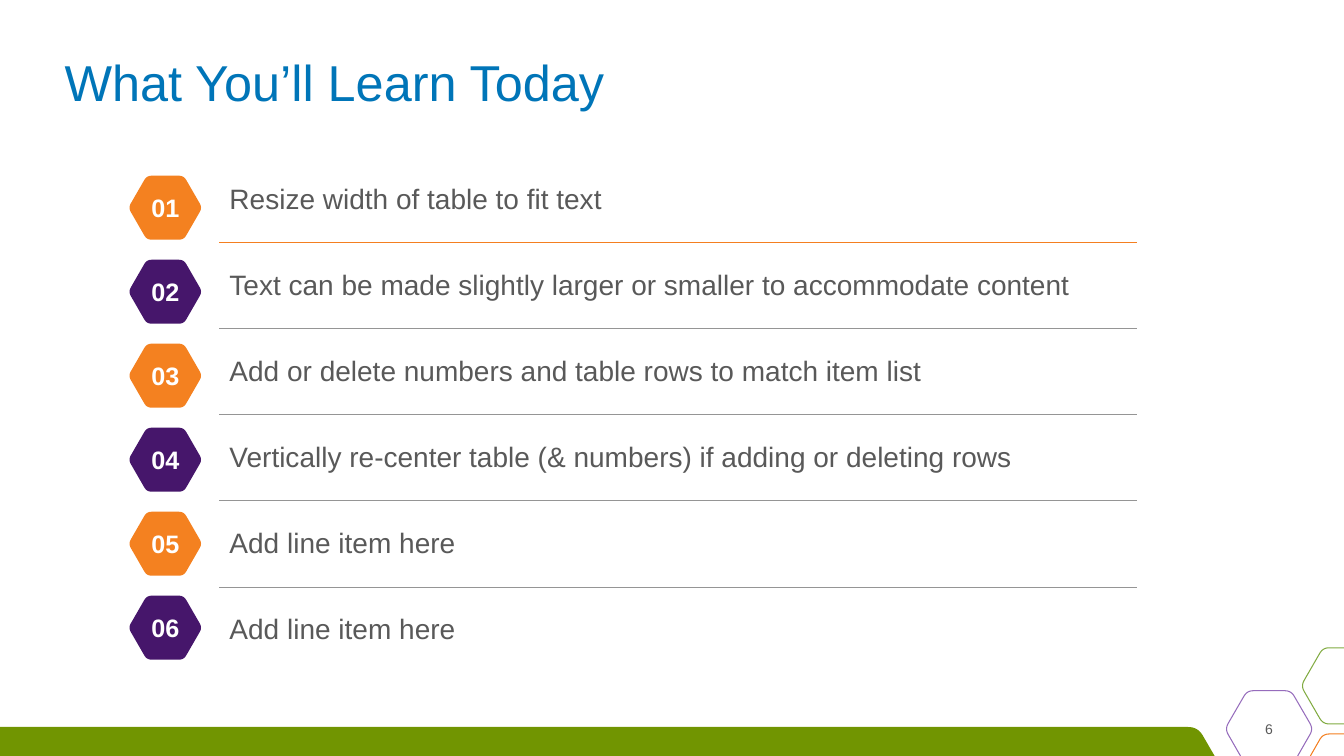
from lxml import etree
from pptx import Presentation
from pptx.dml.color import RGBColor
from pptx.enum.text import MSO_ANCHOR, PP_ALIGN
from pptx.oxml.ns import qn
from pptx.util import Pt

LEFT, CENTER = PP_ALIGN.LEFT, PP_ALIGN.CENTER
MIDDLE = MSO_ANCHOR.MIDDLE

BLUE = RGBColor(0x00, 0x75, 0xB8)
GRAY = RGBColor(0x59, 0x59, 0x59)
RULE_GRAY = RGBColor(0x95, 0x95, 0x95)
ORANGE = RGBColor(0xF4, 0x7F, 0x20)
BADGE_ORANGE = RGBColor(0xF4, 0x81, 0x20)
PURPLE = RGBColor(0x46, 0x16, 0x6B)
LILAC = RGBColor(0x96, 0x6C, 0xBC)
LEAF = RGBColor(0x81, 0xAB, 0x41)
GREEN = RGBColor(0x71, 0x95, 0x01)
WHITE = RGBColor(0xFF, 0xFF, 0xFF)

TITLE = "What You’ll Learn Today"
PAGE_NUMBER = "6"
ITEMS = [
    "Resize width of table to fit text",
    "Text can be made slightly larger or smaller to accommodate content",
    "Add or delete numbers and table rows to match item list",
    "Vertically re-center table (& numbers) if adding or deleting rows",
    "Add line item here",
    "Add line item here",
]

# Corners are (x, y, rounding) in points
FOOTER = [(0, 519.3, 0), (855.6, 519.3, 7), (867.6, 540, 0), (0, 540, 0)]
HONEYCOMB = [
    (LILAC, [(886.1, 540, 0), (875, 520.7, 4.5), (890.8, 493.4, 4.5),
             (922.2, 493.4, 4.5), (938, 520.7, 4.5), (926.9, 540, 0)]),
    (LEAF, [(960, 517.1, 0), (945, 517.1, 4.5), (929.3, 489.9, 4.5),
            (945, 462.7, 4.5), (960, 462.7, 0)]),
    (ORANGE, [(936, 540, 0), (945, 524.3, 4.5), (960, 524.3, 0)]),
]

BADGE_X, BADGE_Y, BADGE_PITCH = 118.1, 148.4, 60
BADGE_HALF_HEIGHT, BADGE_ROUNDING = 22.85, 3.5
TABLE_LEFT, TABLE_TOP, TABLE_WIDTH, ROW_HEIGHT = 156.7, 111.6, 655.5, 61.56
CURVE_STEPS = 8


def toward(start, end, distance):
    dx, dy = end[0] - start[0], end[1] - start[1]
    share = distance / (dx * dx + dy * dy) ** 0.5
    return start[0] + dx * share, start[1] + dy * share


def round_corners(corners):
    """Replace each corner that has a rounding by points on a small curve."""
    points = []
    for i, corner in enumerate(corners):
        x, y, rounding = corner
        if not rounding:
            points.append((x, y))
            continue
        start = toward(corner, corners[i - 1], rounding)
        end = toward(corner, corners[(i + 1) % len(corners)], rounding)
        for step in range(CURVE_STEPS + 1):
            t = step / CURVE_STEPS
            points.append(tuple(
                (1 - t) ** 2 * a + 2 * t * (1 - t) * b + t * t * c
                for a, b, c in zip(start, (x, y), end)))
    return points


def add_outline(slide, corners, fill=None, line=None):
    """Draw a closed filled shape, or an open line when fill is None."""
    first, *rest = [(Pt(x), Pt(y)) for x, y in round_corners(corners)]
    builder = slide.shapes.build_freeform(*first)
    builder.add_line_segments(rest, close=fill is not None)
    shape = builder.convert_to_shape()
    shape.shadow.inherit = False
    if fill is None:
        shape.fill.background()
        shape.line.color.rgb = line
        shape.line.width = Pt(0.75)
    else:
        shape.fill.solid()
        shape.fill.fore_color.rgb = fill
        shape.line.fill.background()
    return shape


def write(frame, text, size, color, align=LEFT, bold=False, spacing=None):
    frame.vertical_anchor = MIDDLE
    paragraph = frame.paragraphs[0]
    paragraph.alignment = align
    paragraph.line_spacing = spacing
    run = paragraph.add_run()
    run.text = text
    for name, value in {"name": "Arial", "size": Pt(size), "bold": bold}.items():
        setattr(run.font, name, value)
    run.font.color.rgb = color


def add_text(slide, box, *args, **kwargs):
    frame = slide.shapes.add_textbox(*map(Pt, box)).text_frame
    frame.word_wrap = True
    write(frame, *args, **kwargs)


def set_borders(cell, top, bottom):
    """Set the cell's rules; None means no rule on that side."""
    properties = cell._tc.get_or_add_tcPr()
    sides = {"a:lnL": None, "a:lnR": None, "a:lnT": top, "a:lnB": bottom}
    for position, (tag, color) in enumerate(sides.items()):
        border = etree.Element(qn(tag), w=str(Pt(0.75)))
        if color is None:
            etree.SubElement(border, qn("a:noFill"))
        else:
            solid = etree.SubElement(border, qn("a:solidFill"))
            etree.SubElement(solid, qn("a:srgbClr"), val=str(color))
        properties.insert(position, border)


def add_items(slide):
    box = (TABLE_LEFT, TABLE_TOP, TABLE_WIDTH, ROW_HEIGHT * len(ITEMS))
    table = slide.shapes.add_table(len(ITEMS), 1, *map(Pt, box)).table
    table.first_row = table.horz_banding = False
    rules = [None, ORANGE] + [RULE_GRAY] * (len(ITEMS) - 2) + [None]
    for i, item in enumerate(ITEMS):
        table.rows[i].height = Pt(ROW_HEIGHT)
        cell = table.cell(i, 0)
        cell.fill.background()
        cell.vertical_anchor = MIDDLE
        write(cell.text_frame, item, 20, GRAY)
        # the cell, not its text frame, carries the vertical anchor
        cell.text_frame.vertical_anchor = None
        set_borders(cell, rules[i], rules[i + 1])


def add_badge(slide, index):
    y = BADGE_Y + index * BADGE_PITCH
    radius = BADGE_HALF_HEIGHT / 0.866
    hexagon = [(-1, 0), (-0.5, -1), (0.5, -1), (1, 0), (0.5, 1), (-0.5, 1)]
    corners = [(BADGE_X + dx * radius, y + dy * BADGE_HALF_HEIGHT, BADGE_ROUNDING)
               for dx, dy in hexagon]
    badge = add_outline(slide, corners, fill=(BADGE_ORANGE, PURPLE)[index % 2])
    frame = badge.text_frame
    frame.word_wrap = False
    for side in ("left", "top", "right", "bottom"):
        setattr(frame, f"margin_{side}", 0)
    write(frame, f"{index + 1:02}", 18, WHITE, CENTER, bold=True)


def main():
    deck = Presentation()
    deck.slide_width, deck.slide_height = Pt(960), Pt(540)
    slide = deck.slides.add_slide(deck.slide_layouts[6])
    add_outline(slide, FOOTER, fill=GREEN)
    for color, corners in HONEYCOMB:
        add_outline(slide, corners, line=color)
    add_text(slide, (39, 36, 882, 50.4), TITLE, 36, BLUE, spacing=0.9)
    add_text(slide, (877, 512, 59, 17.3), PAGE_NUMBER, 10, GRAY, CENTER)
    add_items(slide)
    for index in range(len(ITEMS)):
        add_badge(slide, index)
    deck.save("out.pptx")


if __name__ == "__main__":
    main()
